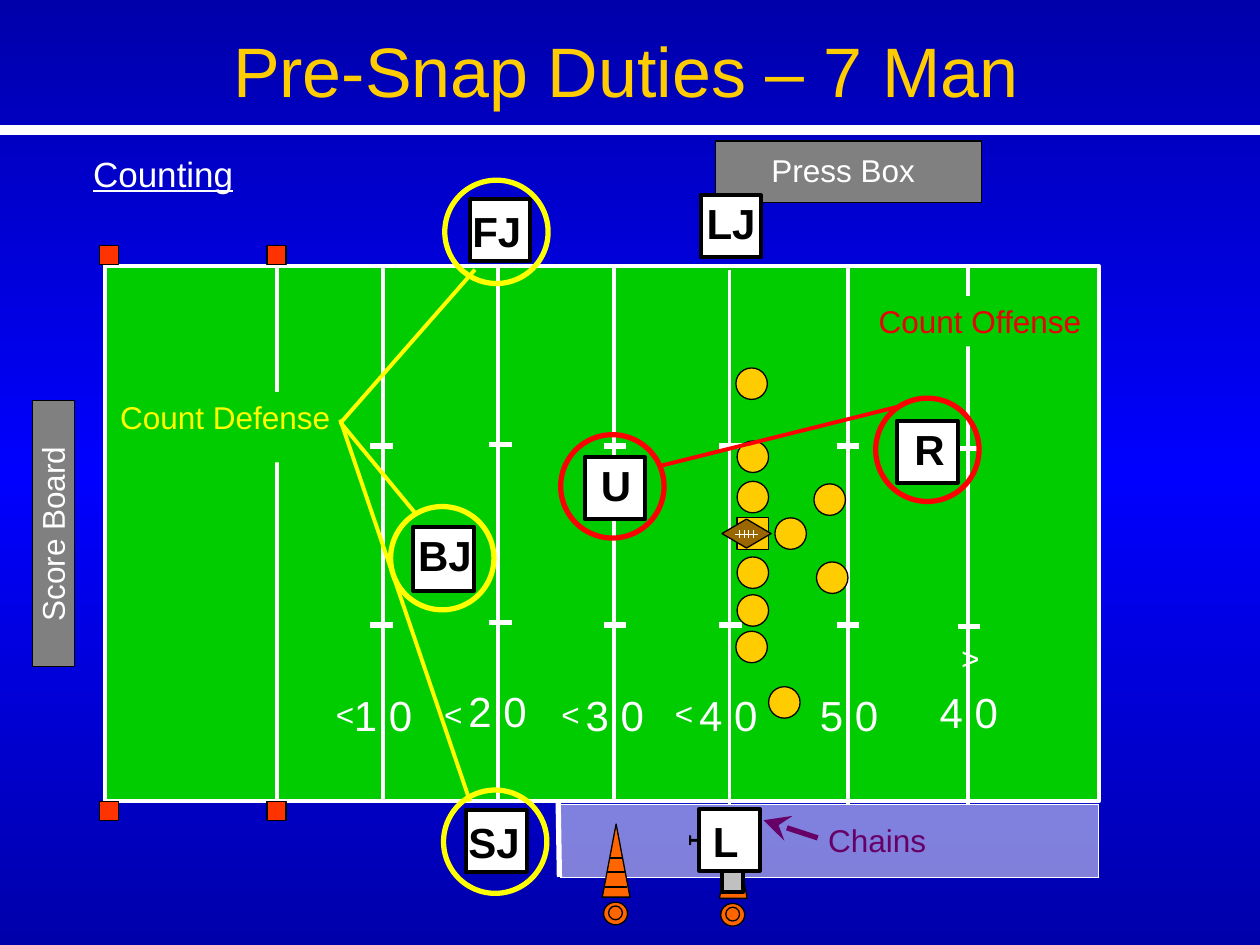
"""Builds the Pre-Snap Duties slide: a football field with seven officials."""
from copy import deepcopy

from lxml import etree
from pptx import Presentation
from pptx.dml.color import RGBColor
from pptx.enum.dml import MSO_LINE
from pptx.enum.shapes import MSO_CONNECTOR, MSO_SHAPE
from pptx.enum.text import MSO_ANCHOR, PP_ALIGN
from pptx.oxml.ns import qn
from pptx.util import Inches, Pt

RECT, OVAL = MSO_SHAPE.RECTANGLE, MSO_SHAPE.OVAL
TRIANGLE, DIAMOND = MSO_SHAPE.ISOSCELES_TRIANGLE, MSO_SHAPE.FLOWCHART_DECISION
STRAIGHT = MSO_CONNECTOR.STRAIGHT
LEFT, RIGHT = PP_ALIGN.LEFT, PP_ALIGN.RIGHT
TOP = MSO_ANCHOR.TOP
WHITE, BLACK, GREEN, GRAY = "FFFFFF", "000000", "00CC00", "808080"
ORANGE, GOLD, YELLOW, RED = "FF6600", "FFCC00", "FFFF00", "FF0000"
PURPLE = "660066"
rgb = RGBColor.from_string

deck = Presentation()
deck.slide_width, deck.slide_height = Inches(10), Inches(7.5)
page = deck.slides.add_slide(deck.slide_layouts[5])


def add_box(kind, at, fill=None, line=None, weight=0.75, text="", color=WHITE,
            align=RIGHT, wrap=False, turn=0, **formats):
    """Adds a preset shape, or a text box when kind is None."""
    place = [Inches(length) for length in at]
    if kind is None:
        box = page.shapes.add_textbox(*place)
    else:
        box = page.shapes.add_shape(kind, *place)
        box.shadow.inherit = False
    box.rotation = turn
    if fill:
        box.fill.solid()
        box.fill.fore_color.rgb = rgb(fill)
    else:
        box.fill.background()
    if line:
        box.line.color.rgb = rgb(line)
        box.line.width = Pt(weight)
    else:
        box.line.fill.background()
    if text:
        box.text_frame.word_wrap = wrap
        box.text_frame.vertical_anchor = TOP
        para = box.text_frame.paragraphs[0]
        para.alignment = align
        span = para.add_run()
        span.text = text
        span.font.color.rgb = rgb(color)
        for name, value in {"name": "Arial", "size": Pt(18), **formats}.items():
            setattr(span.font, name, value)
    return box


def add_line(x1, y1, x2, y2, color=WHITE, weight=2.25):
    """Adds a straight line without a shadow."""
    line = page.shapes.add_connector(STRAIGHT, Inches(x1), Inches(y1), Inches(x2), Inches(y2))
    line.line.color.rgb = rgb(color)
    line.line.width = Pt(weight)
    etree.SubElement(line.element.spPr, qn("a:effectLst"))
    return line


backdrop = page.background.fill
backdrop.gradient()
backdrop.gradient_angle = 90
stop_list = page.element.find(".//" + qn("a:gsLst"))
stop_list.append(deepcopy(stop_list[-1]))
for stop, position, color in zip(backdrop.gradient_stops, (0, 0.5, 1), ("0000AA", "0000FF", "0000AA")):
    stop.position = position
    stop.color.rgb = rgb(color)

title = page.shapes.title
title.left, title.top, title.width, title.height = (Inches(n) for n in (1.75, 0.17, 6.52, 0.77))
title.text_frame.text = "Pre-Snap Duties – 7 Man"
para = title.text_frame.paragraphs[0]
para.alignment = LEFT
for name, value in {"name": "Arial", "size": Pt(40)}.items():
    setattr(para.runs[0].font, name, value)
para.runs[0].font.color.rgb = rgb(GOLD)

add_box(RECT, (6.49, 0.31, 0.49, 2.11), GRAY, BLACK, turn=270)
add_line(0, 1.03, 10, 1.03, weight=6)
add_box(None, (0.64, 1.16, 1.5, 0.44), text="Counting", align=LEFT, wrap=True, size=Pt(20), underline=True)
add_box(None, (6.02, 1.15, 1.34, 0.4), text="Press Box")
add_box(RECT, (0.26, 3.18, 0.33, 2.11), GRAY, BLACK)
add_box(None, (-0.38, 4.04, 1.59, 0.4), text="Score Board", turn=270)

add_box(RECT, (0.83, 2.11, 7.89, 4.25), GREEN, WHITE, 2.25)
for x, top in ((2.2, 2.11), (3.04, 2.11), (3.95, 2.11), (4.87, 2.11), (5.79, 2.14), (6.73, 2.13), (7.68, 2.13)):
    add_line(x, top, x, top + 4.25)
for x in (0.79, 2.12):
    for y in (1.95, 6.36):
        add_box(RECT, (x, y, 0.15, 0.15), "FF3300", BLACK)
for x, upper, lower in ((2.94, 3.54, 4.96), (3.88, 3.53, 4.94), (4.79, 3.54, 4.96),
                        (5.71, 3.54, 4.96), (6.64, 3.54, 4.96), (7.6, 3.56, 4.97)):
    for y in (upper, lower):
        add_line(x, y, x + 0.18, y, weight=3)
for text, x, y in (("1 0", 2.61, 5.42), ("2 0", 3.52, 5.39), ("3 0", 4.45, 5.42),
                   ("4 0", 5.35, 5.42), ("5 0", 6.31, 5.42), ("4 0", 7.26, 5.4)):
    add_box(None, (x, y, 0.76, 0.5), text=text, wrap=True, size=Pt(24))
for x, y, turn in ((2.56, 5.47, 0), (3.42, 5.47, 0), (4.35, 5.47, 0), (5.25, 5.46, 0), (7.53, 5.05, 180)):
    add_box(None, (x, y, 0.35, 0.4), text="<", turn=turn)

add_line(4.43, 6.36, 4.44, 6.96, weight=3)
team_area = add_box(RECT, (4.44, 6.38, 4.28, 0.58), WHITE, WHITE, 0.25)
team_area.line.dash_style = MSO_LINE.ROUND_DOT
fill_color = team_area.element.spPr.find(qn("a:solidFill"))[0]
etree.SubElement(fill_color, qn("a:alpha"), val="50000")

for x, y, stripes in ((5.71, 6.55, (0.38, 0.5)), (4.78, 6.54, (0.27, 0.38, 0.5))):
    add_box(TRIANGLE, (x, y, 0.22, 0.58), ORANGE, BLACK)
    add_box(OVAL, (x + 0.01, y + 0.62, 0.19, 0.18), ORANGE, BLACK)
    add_box(OVAL, (x + 0.05, y + 0.65, 0.11, 0.11), None, BLACK)
    for drop in stripes:
        half = drop * 0.18
        add_line(x + 0.11 - half, y + drop, x + 0.11 + half, y + drop, BLACK, 0.75)
add_box(RECT, (5.73, 6.87, 0.17, 0.21), "C0C0C0", BLACK, 2.25)
add_box(None, (5.39, 6.52, 0.29, 0.3), text="1", color=BLACK, align=LEFT, turn=90, size=Pt(12), bold=True)

for text, x, y, height, text_x, text_y, width in (
        ("FJ", 3.73, 1.58, 0.49, 3.65, 1.58, 0.67), ("U", 4.64, 3.63, 0.49, 4.67, 3.6, 0.34),
        ("SJ", 3.7, 6.43, 0.49, 3.62, 6.43, 0.67), ("R", 7.12, 3.34, 0.49, 7.16, 3.31, 0.34),
        ("L", 5.55, 6.42, 0.49, 5.56, 6.42, 0.58), ("LJ", 5.56, 1.55, 0.49, 5.51, 1.52, 0.76),
        ("BJ", 3.28, 4.18, 0.51, 3.22, 4.15, 0.66)):
    add_box(RECT, (x, y, 0.48, height), WHITE, BLACK, 2.25)
    add_box(None, (text_x, text_y, width, 0.5), text=text, color=BLACK, align=LEFT,
            wrap=True, size=Pt(24), bold=True)

add_box(RECT, (5.85, 4.11, 0.25, 0.25), GOLD, BLACK)
for x, y in ((5.85, 3.82), (5.85, 3.5), (5.85, 4.42), (5.85, 4.72), (6.15, 4.11),
             (6.1, 5.45), (5.84, 5.01), (5.84, 2.92), (6.46, 3.84), (6.48, 4.46)):
    add_box(OVAL, (x, y, 0.25, 0.25), GOLD, BLACK)
add_box(DIAMOND, (5.73, 4.12, 0.39, 0.23), "996600", BLACK)
add_line(5.83, 4.24, 6.02, 4.24, weight=0.75)
for x in (5.87, 5.91, 5.94, 5.98):
    add_line(x, 4.21, x, 4.27, weight=0.75)

add_box(RECT, (6.87, 2.35, 1.81, 0.4), GREEN, text="Count Offense", color="EA0000")
for x, y, color in ((6.95, 3.16, RED), (4.45, 3.45, RED), (3.53, 1.43, YELLOW),
                    (3.1, 4.02, YELLOW), (3.52, 6.27, YELLOW)):
    add_box(OVAL, (x, y, 0.82, 0.82), None, color, 3)
add_box(RECT, (2.07, 3.12, 0.25, 0.43), GREEN, GREEN)
add_box(RECT, (0.86, 3.24, 1.76, 0.43), GREEN)
add_box(RECT, (0.86, 3.11, 1.86, 0.4), GREEN, text="Count Defense", color=YELLOW)

chains_arrow = add_line(6.49, 6.65, 6.06, 6.51, PURPLE, 3)
etree.SubElement(chains_arrow.line._get_or_add_ln(), qn("a:tailEnd"), type="stealth", w="lg", len="lg")
add_box(None, (6.47, 6.47, 0.98, 0.4), text="Chains", color=PURPLE)
for ends in ((3.73, 6.36, 2.7, 3.33), (3.31, 4.09, 2.7, 3.35), (2.7, 3.36, 3.77, 2.14)):
    add_line(*ends, YELLOW)
add_line(5.23, 3.7, 7.16, 3.22, RED)

deck.save("out.pptx")
